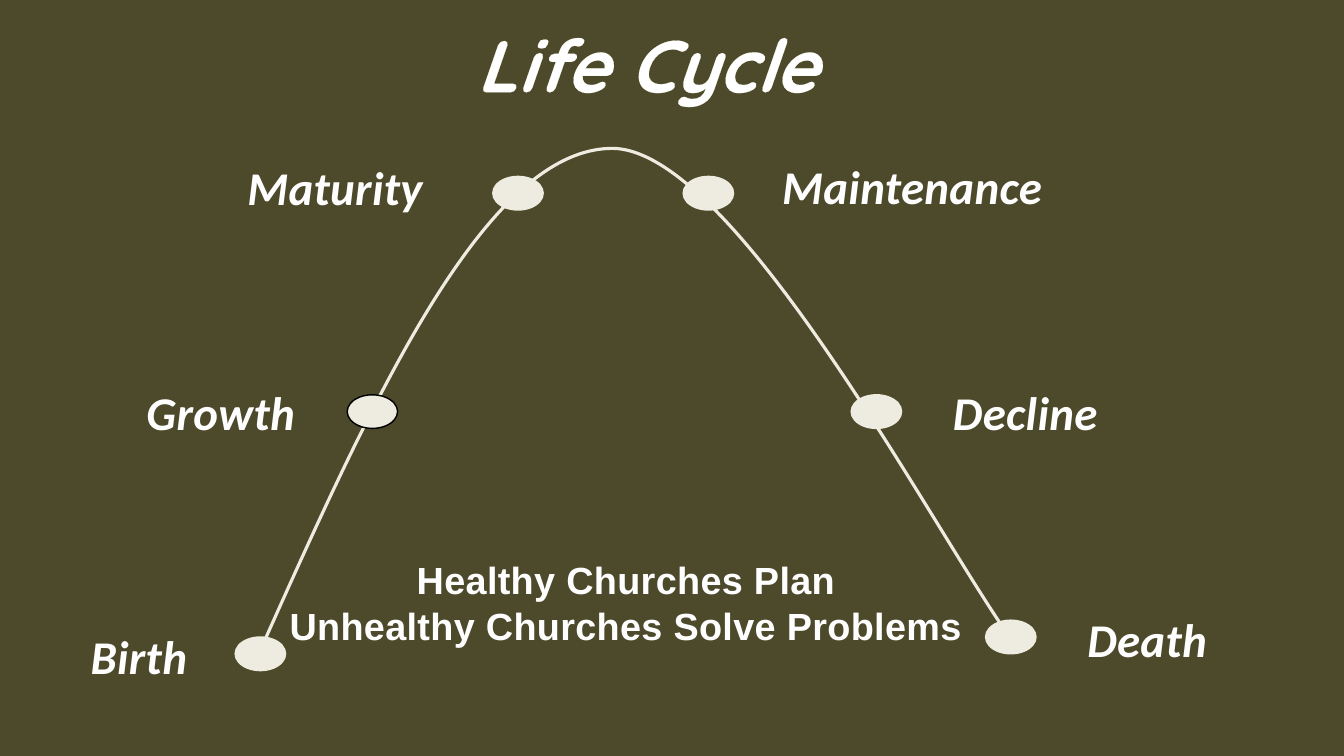
from dataclasses import dataclass

from lxml.etree import SubElement
from pptx import Presentation
from pptx.dml.color import RGBColor
from pptx.enum.shapes import MSO_SHAPE
from pptx.enum.text import MSO_ANCHOR, MSO_AUTO_SIZE, PP_ALIGN
from pptx.oxml import parse_xml
from pptx.oxml.ns import qn
from pptx.util import Pt

DRAWING_NS = 'xmlns:a="http://schemas.openxmlformats.org/drawingml/2006/main"'


@dataclass(frozen=True)
class Theme:
    background: str = "4D492B"
    ivory: str = "EEECE1"
    dot_edge: str = "EEECE0"
    highlight: str = "000000"
    title: str = "FFFFFF"
    title_edge: str = "F7F4E4"
    text: str = "FEFEFE"
    text_edge: str = "202086"
    title_font: str = "Quicksand"
    stage_font: str = "Calibri"
    motto_font: str = "Arial"
    title_size: int = 105
    stage_size: int = 67
    motto_size: int = 54


def rgb(color):
    return RGBColor.from_string(color)


def write_text(paragraph, text, *, font, size, color, edge, edge_width=1,
               italic=True, spacing=0, shadow=False):
    """Add one outlined bold run, optionally with a soft shadow."""
    run = paragraph.add_run()
    run.text = text
    run.font.name, run.font.size = font, Pt(size)
    run.font.bold, run.font.italic = True, italic
    run.font.color.rgb = rgb(color)
    properties = run.font._element
    if spacing:
        properties.set("spc", str(int(spacing * 100)))
    properties.insert(0, parse_xml(
        f'<a:ln {DRAWING_NS} w="{Pt(edge_width)}"><a:solidFill>'
        f'<a:srgbClr val="{edge}"/></a:solidFill></a:ln>'))
    if shadow:
        properties.insert(2, parse_xml(
            f'<a:effectLst {DRAWING_NS}><a:outerShdw blurRad="{Pt(3)}" '
            f'dist="{Pt(3)}" dir="2700000"><a:srgbClr val="{edge}"/>'
            '</a:outerShdw></a:effectLst>'))


class SlideBuilder:
    def __init__(self, slide, theme):
        self.slide, self.theme = slide, theme
        slide.background.fill.solid()
        slide.background.fill.fore_color.rgb = rgb(theme.background)

    def text(self, lines, left, top, width, height, *, insets=(17.28, 8.64),
             align=PP_ALIGN.LEFT, anchor=MSO_ANCHOR.TOP, grow=True, **style):
        box = self.slide.shapes.add_textbox(
            Pt(left), Pt(top), Pt(width), Pt(height))
        frame = box.text_frame
        frame.word_wrap = not grow
        frame.auto_size = (MSO_AUTO_SIZE.SHAPE_TO_FIT_TEXT if grow
                           else MSO_AUTO_SIZE.NONE)
        frame.vertical_anchor = anchor
        frame.margin_left = frame.margin_right = Pt(insets[0])
        frame.margin_top = frame.margin_bottom = Pt(insets[1])
        for index, line in enumerate(lines):
            paragraph = frame.add_paragraph() if index else frame.paragraphs[0]
            paragraph.alignment = align
            write_text(paragraph, line, **style)

    def curve(self, start, *controls, width=4.5):
        """Draw a cubic curve; every three controls make one segment."""
        builder = self.slide.shapes.build_freeform(Pt(start[0]), Pt(start[1]))
        builder.add_line_segments(
            [(Pt(x), Pt(y)) for x, y in controls], close=False)
        arc = builder.convert_to_shape()
        arc.shadow.inherit = False
        arc.fill.background()
        arc.line.color.rgb = rgb(self.theme.ivory)
        arc.line.width = Pt(width)
        # Regroup the straight segments into cubic ones
        outline = next(arc._element.iter(qn("a:path")))
        segments = outline.findall(qn("a:lnTo"))
        for index, segment in enumerate(segments):
            if index % 3 == 0:
                cubic = SubElement(outline, qn("a:cubicBezTo"))
            cubic.append(segment[0])
            outline.remove(segment)

    def dot(self, left, top, edge):
        dot = self.slide.shapes.add_shape(
            MSO_SHAPE.OVAL, Pt(left), Pt(top), Pt(72), Pt(48))
        dot.shadow.inherit = False
        dot.fill.solid()
        dot.fill.fore_color.rgb = rgb(self.theme.ivory)
        dot.line.color.rgb = rgb(edge)
        dot.line.width = Pt(2)


def main():
    theme = Theme()
    deck = Presentation()
    deck.slide_width, deck.slide_height = Pt(1920), Pt(1080)
    page = SlideBuilder(deck.slides.add_slide(deck.slide_layouts[6]), theme)

    # Title
    page.text(["Life Cycle"], 0, 0, 1848, 180, align=PP_ALIGN.CENTER,
              anchor=MSO_ANCHOR.MIDDLE, grow=False, font=theme.title_font,
              size=theme.title_size, color=theme.title,
              edge=theme.title_edge, edge_width=2.48)

    # Life cycle curve
    page.curve((366, 942), (528.5, 578), (691, 214), (873.5, 212),
               (1055.5, 210), (1361, 811), (1458, 931))

    # Stages: name, label left, top and width, dot left and top
    stages = [
        ("Birth", 112, 888, 201, 336, 910),
        ("Growth", 192, 540, 278, 496, 564),
        ("Maturity", 336, 218, 311, 704, 252),
        ("Maintenance", 1100, 216, 439, 976, 252),
        ("Decline", 1344, 540, 283, 1216, 564),
        ("Death", 1536, 864, 235, 1408, 886),
    ]
    label_style = dict(color=theme.text, edge=theme.text_edge,
                       spacing=0.5, shadow=True)
    for name, left, top, width, _, _ in stages:
        page.text([name], left, top, width, 99, font=theme.stage_font,
                  size=theme.stage_size, **label_style)
    for name, *_, left, top in stages:
        page.dot(left, top,
                 theme.highlight if name == "Growth" else theme.dot_edge)

    # Motto
    page.text(["Healthy Churches Plan", "Unhealthy Churches Solve Problems"],
              402, 792, 985, 138, insets=(7.2, 3.6), align=PP_ALIGN.CENTER,
              font=theme.motto_font, size=theme.motto_size, italic=False,
              **label_style)

    deck.save("out.pptx")


if __name__ == "__main__":
    main()
